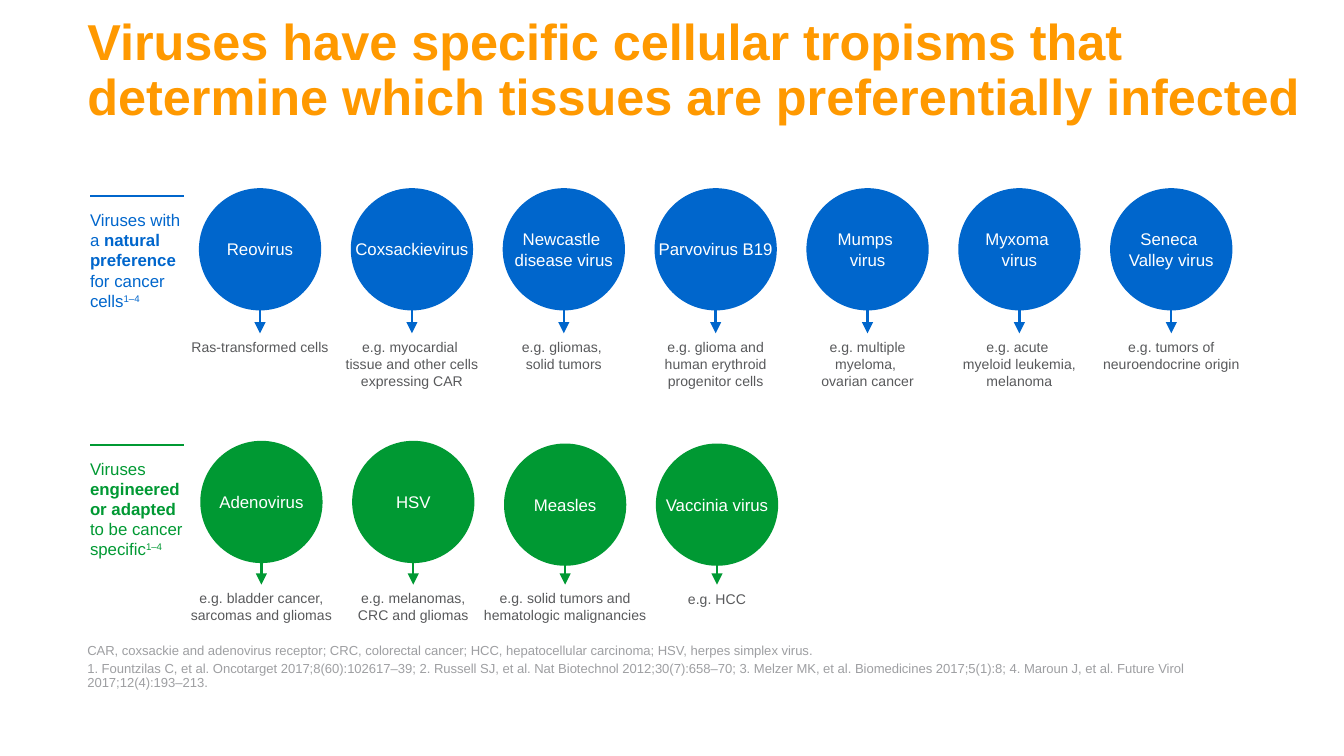
from pptx import Presentation
from pptx.dml.color import RGBColor as Rgb
from pptx.enum.shapes import MSO_CONNECTOR as Conn, MSO_SHAPE as Shape
from pptx.enum.text import MSO_ANCHOR as Anchor, MSO_AUTO_SIZE as Auto, PP_ALIGN as Align
from pptx.oxml.ns import qn
from pptx.util import Inches, Pt
from lxml.etree import SubElement

COLORS = {
    "title": "FF9900",
    "blue": "0066CC",
    "green": "009933",
    "white": "FFFFFF",
    "note": "58595B",
    "foot": "9E9FA2",
}
SIZE = 0.91
STEP = 1.13

ROWS = [
    {
        "color": "blue", "left": 1.48, "rule": 1.46, "label": 1.56, "notes": 2.48,
        "text": [("Viruses with a ", ""), ("natural preference ", "bold"),
                 ("for cancer cells", ""), ("1–4", "super")],
        "items": [
            ("Reovirus", 1.4, "Ras-transformed cells", 1.2, 0.21),
            ("Coxsackievirus", 1.4, "e.g. myocardial \vtissue and other cells expressing CAR", 1.18, 0.46),
            ("Newcastle \vdisease virus", 1.4, "e.g. gliomas, \vsolid tumors", 1.18, 0.33),
            ("Parvovirus B19", 1.4, "e.g. glioma and human erythroid progenitor cells", 1.18, 0.46),
            ("Mumps \vvirus", 1.4, "e.g. multiple myeloma, \vovarian cancer", 1.18, 0.46),
            ("Myxoma \vvirus", 1.4, "e.g. acute \vmyeloid leukemia, melanoma", 1.07, 0.46),
            ("Seneca \vValley virus", 1.4, "e.g. tumors of neuroendocrine origin", 1.18, 0.33),
        ],
    },
    {
        "color": "green", "left": 1.49, "rule": 3.31, "label": 3.41, "notes": 4.35,
        "text": [("Viruses ", ""), ("engineered or adapted ", "bold"),
                 ("to be cancer specific", ""), ("1–4", "super")],
        "items": [
            ("Adenovirus", 3.28, "e.g. bladder cancer, sarcomas and gliomas", 1.23, 0.33),
            ("HSV", 3.28, "e.g. melanomas, CRC and gliomas", 1.07, 0.33),
            ("Measles", 3.3, "e.g. solid tumors and hematologic malignancies", 1.49, 0.33),
            ("Vaccinia virus", 3.3, "e.g. HCC", 0.64, 0.21),
        ],
    },
]

FOOT = [
    "CAR, coxsackie and adenovirus receptor; CRC, colorectal cancer; HCC, hepatocellular carcinoma; "
    "HSV, herpes simplex virus.",
    "1. Fountzilas C, et al. Oncotarget 2017;8(60):102617–39; 2. Russell SJ, et al. Nat Biotechnol "
    "2012;30(7):658–70; 3. Melzer MK, et al. Biomedicines 2017;5(1):8; 4. Maroun J, et al. Future Virol "
    "2017;12(4):193–213.",
]


class Deck:
    font = "Arial"

    def __init__(self):
        self.prs = Presentation()
        self.prs.slide_width = Inches(10)
        self.prs.slide_height = Inches(10) * 9 // 16
        self.slide = self.prs.slides.add_slide(self.prs.slide_layouts[5])
        self.shapes = self.slide.shapes

    def color(self, key):
        return Rgb.from_string(COLORS[key])

    def style(self, frame, size, key, align=Align.LEFT, bold=False):
        for para in frame.paragraphs:
            para.alignment = align
            for run in para.runs:
                run.font.name = self.font
                run.font.size = Pt(size)
                run.font.bold = bold
                run.font.color.rgb = self.color(key)

    def inset(self, frame, side, top):
        frame.margin_left = frame.margin_right = Inches(side)
        frame.margin_top = frame.margin_bottom = Inches(top)

    def title(self, text, x, y, w, h):
        head = self.shapes.title
        head.left, head.top, head.width, head.height = map(Inches, (x, y, w, h))
        frame = head.text_frame
        frame.text = text
        frame.word_wrap = True
        frame.auto_size = Auto.NONE
        frame.vertical_anchor = Anchor.BOTTOM
        self.inset(frame, 0, 0)
        frame.paragraphs[0].line_spacing = 0.9
        self.style(frame, 27, "title", bold=True)

    def box(self, x, y, w, h, side=0, top=0):
        box = self.shapes.add_textbox(*map(Inches, (x, y, w, h)))
        box.text_frame.word_wrap = True
        self.inset(box.text_frame, side, top)
        return box

    def label(self, parts, key, x, y, w, h):
        frame = self.box(x, y, w, h).text_frame
        frame.auto_size = Auto.SHAPE_TO_FIT_TEXT
        para = frame.paragraphs[0]
        for text, kind in parts:
            para.add_run().text = text
        self.style(frame, 9, key)
        for run, (text, kind) in zip(para.runs, parts):
            run.font.bold = kind == "bold"
            if kind == "super":
                run._r.get_or_add_rPr().set("baseline", "30000")

    def note(self, text, x, y, w, h):
        box = self.box(x, y, w, h, 0.08, 0.04)
        frame = box.text_frame
        frame.auto_size = Auto.SHAPE_TO_FIT_TEXT
        frame.paragraphs[0].text = text
        self.style(frame, 7.5, "note", Align.CENTER)
        return box

    def foot(self, lines, x, y, w, h):
        frame = self.box(x, y, w, h).text_frame
        frame.text = "\n".join(lines)
        frame.vertical_anchor = Anchor.BOTTOM
        for para in frame.paragraphs:
            para.line_spacing = 0.9
            para.space_after = Pt(2)
        self.style(frame, 7, "foot")

    def disc(self, text, key, x, y):
        disc = self.shapes.add_shape(Shape.OVAL, *map(Inches, (x, y, SIZE, SIZE)))
        disc.shadow.inherit = False
        disc.fill.solid()
        disc.fill.fore_color.rgb = self.color(key)
        disc.line.fill.background()
        frame = disc.text_frame
        frame.paragraphs[0].text = text
        frame.word_wrap = False
        frame.vertical_anchor = Anchor.MIDDLE
        self.style(frame, 9, "white", Align.CENTER)

    def line(self, key, x1, y1, x2, y2):
        line = self.shapes.add_connector(Conn.STRAIGHT, *map(Inches, (x1, y1, x2, y2)))
        line.line.color.rgb = self.color(key)
        line.line.width = Pt(1.25)
        SubElement(line._element.spPr, qn("a:effectLst"))
        return line

    def arrow(self, key, x, y, box):
        line = self.line(key, x, y, x, y)
        line.end_connect(box, 0)
        SubElement(line.line._get_or_add_ln(), qn("a:tailEnd"), type="triangle")

    def row(self, row):
        key = row["color"]
        self.line(key, 0.67, row["rule"], 1.37, row["rule"])
        self.label(row["text"], key, 0.67, row["label"], 0.73, 0.76)
        for i, (name, top, text, w, h) in enumerate(row["items"]):
            left = row["left"] + i * STEP
            mid = left + SIZE / 2
            self.disc(name, key, left, top)
            note = self.note(text, mid - w / 2, row["notes"], w, h)
            self.arrow(key, mid, top + SIZE, note)


def main():
    deck = Deck()
    deck.title("Viruses have specific cellular tropisms that determine which tissues "
               "are preferentially infected", 0.65, 0.3, 9.35, 0.64)
    for row in ROWS:
        deck.row(row)
    deck.foot(FOOT, 0.65, 4.81, 8.66, 0.33)
    deck.prs.save("out.pptx")


if __name__ == "__main__":
    main()
